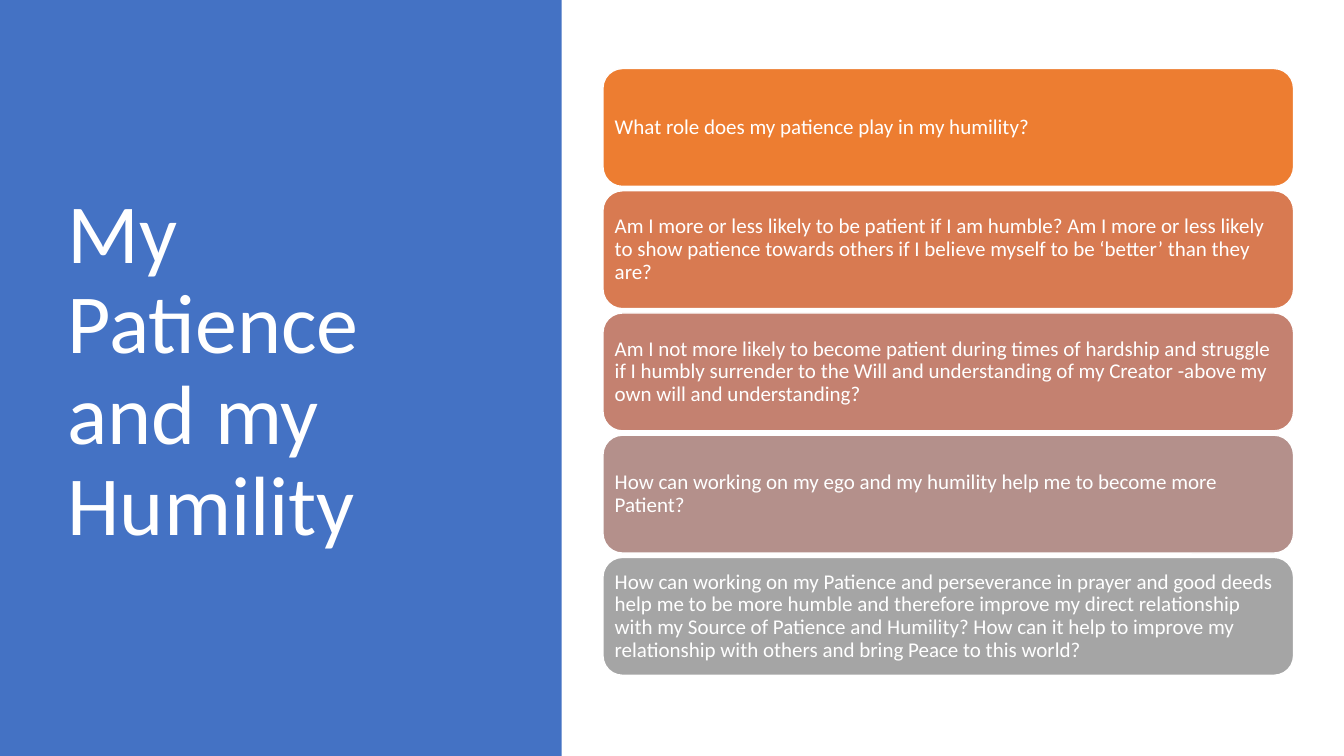
import dataclasses

import pptx
import pptx.dml.color
import pptx.enum.shapes
import pptx.enum.text
import pptx.util

Inches = pptx.util.Inches
Pt = pptx.util.Pt
MSO_SHAPE = pptx.enum.shapes.MSO_SHAPE


@dataclasses.dataclass(frozen=True)
class Theme:
    font: str = "Calibri"
    white: str = "FFFFFF"
    panel: str = "4472C4"
    cards: tuple = ("ED7D31", "D87A51", "C48170", "B4908B", "A5A5A5")
    title_size: int = 60
    card_size: int = 15


THEME = Theme()

QUESTIONS = (
    "What role does my patience play in my humility?",
    "Am I more or less likely to be patient if I am humble? Am I more or less "
    "likely to show patience towards others if I believe myself to be "
    "‘better’ than they are?",
    "Am I not more likely to become patient during times of hardship and "
    "struggle if I humbly surrender to the Will and understanding of my "
    "Creator -above my own will and understanding?",
    "How can working on my ego and my humility help me to become more Patient?",
    "How can working on my Patience and perseverance in prayer and good deeds "
    "help me to be more humble and therefore improve my direct relationship "
    "with my Source of Patience and Humility? How can it help to improve my "
    "relationship with others and bring Peace to this world?",
)


def rgb(code):
    return pptx.dml.color.RGBColor.from_string(code)


def write_text(shape, text, *, size, color=THEME.white, inset=None):
    frame = shape.text_frame
    frame.word_wrap = True
    frame.auto_size = pptx.enum.text.MSO_AUTO_SIZE.NONE
    frame.vertical_anchor = pptx.enum.text.MSO_ANCHOR.MIDDLE
    if inset is not None:
        frame.margin_left = frame.margin_right = Inches(inset)
        frame.margin_top = frame.margin_bottom = Inches(inset)
    frame.text = text
    paragraph = frame.paragraphs[0]
    paragraph.alignment = pptx.enum.text.PP_ALIGN.LEFT
    paragraph.line_spacing = 0.9
    font = paragraph.runs[0].font
    font.name = THEME.font
    font.size = Pt(size)
    font.color.rgb = rgb(color)


def add_block(slide, kind, left, top, width, height, fill, line=None):
    block = slide.shapes.add_shape(
        kind, Inches(left), Inches(top), Inches(width), Inches(height))
    block.shadow.inherit = False
    block.fill.solid()
    block.fill.fore_color.rgb = rgb(fill)
    if line:
        block.line.color.rgb = rgb(line)
        block.line.width = Pt(1)
    else:
        block.line.fill.background()
    return block


def add_panel(slide):
    panel = add_block(slide, MSO_SHAPE.RECTANGLE, 0, 0, 5.57, 7.5, THEME.panel)
    # Send the panel behind the title
    slide.shapes.element.insert(2, panel.element)


def place_title(slide, text):
    title = slide.shapes.title
    title.left, title.top = Inches(0.57), Inches(0.68)
    title.width, title.height = Inches(4.16), Inches(6.02)
    write_text(title, text, size=THEME.title_size)


def add_question_cards(slide, questions):
    first_top, height, last_bottom = 0.68, 1.17, 6.7
    pitch = (last_bottom - height - first_top) / (len(questions) - 1)
    for row, (question, fill) in enumerate(zip(questions, THEME.cards)):
        card = add_block(slide, MSO_SHAPE.ROUNDED_RECTANGLE, 5.98,
                         first_top + row * pitch, 6.85, height, fill, THEME.white)
        write_text(card, question, size=THEME.card_size, inset=0.06)


def main():
    deck = pptx.Presentation()
    deck.slide_width, deck.slide_height = Inches(13.33), Inches(7.5)
    slide = deck.slides.add_slide(deck.slide_layouts.get_by_name("Title Only"))

    # Left side: title on a blue panel
    add_panel(slide)
    place_title(slide, "My Patience and my Humility")

    # Right side: reflection questions
    add_question_cards(slide, QUESTIONS)

    deck.save("out.pptx")


if __name__ == "__main__":
    main()
